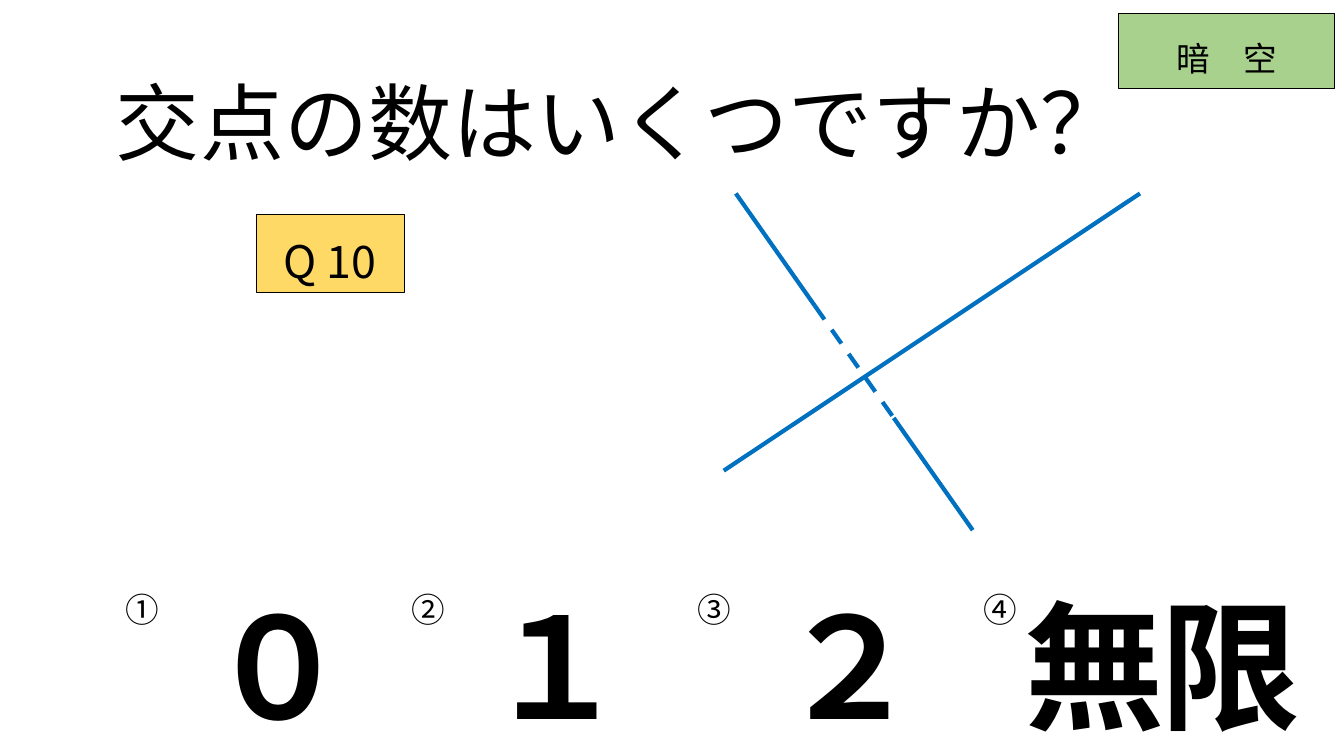
from dataclasses import dataclass

from lxml.etree import SubElement
from pptx import Presentation
from pptx.dml.color import RGBColor
from pptx.enum.dml import MSO_LINE_DASH_STYLE as Dash
from pptx.enum.shapes import MSO_CONNECTOR as Connector, MSO_SHAPE as Shape
from pptx.enum.text import MSO_ANCHOR as Anchor, MSO_AUTO_SIZE as AutoSize, PP_ALIGN as Align
from pptx.oxml.ns import qn
from pptx.util import Pt

COLORS = {"ink": "000000", "tag": "A9D18E", "number": "FFD966", "line": "0070C0"}
FONT = "Noto Sans CJK JP"


@dataclass(frozen=True)
class Box:
    left: float
    top: float
    width: float
    height: float

    def lengths(self) -> tuple:
        return Pt(self.left), Pt(self.top), Pt(self.width), Pt(self.height)


@dataclass(frozen=True)
class Label:
    text: str
    box: Box
    size: float
    fill: str
    anchor: Anchor
    space_before: float = 0


@dataclass(frozen=True)
class Choice:
    mark: str
    answer: str
    left: float
    width: float = 112.3
    spacing: float = 0


@dataclass(frozen=True)
class Segment:
    start: tuple[float, float]
    end: tuple[float, float]
    dash: Dash | None = None


TITLE_BOX = Box(59.8, 52.6, 766.1, 73.4)
MARKS_BOX = Box(82.8, 413.3, 816.5, 90)
ANSWER_TOP, ANSWER_HEIGHT = 419.8, 108

LABELS = [
    Label("暗　空", Box(799.2, 9.4, 154.1, 54), 24, "tag", Anchor.TOP, 10),
    Label("Q 10", Box(182.9, 153.4, 105.8, 55.4), 32, "number", Anchor.BOTTOM),
]
CHOICES = [
    Choice("①", "０", 141.8),
    Choice("②", "１", 340.6),
    Choice("③", "２", 549.4),
    Choice("④", "無限", 723.6, 213.8, -3),
]

STEEP_START, STEEP_END = (525.6, 138.2), (694.8, 378.7)


def steep_point(third: int) -> tuple[float, float]:
    """Point of the falling line after the given number of thirds."""
    x, y = (a + (b - a) * third / 3 for a, b in zip(STEEP_START, STEEP_END))
    return x, y


SEGMENTS = [
    Segment(steep_point(0), steep_point(1)),
    Segment((517, 336.2), (814.3, 138.2)),
    Segment(steep_point(1), steep_point(2), Dash.DASH),
    Segment(steep_point(2), steep_point(3)),
]


def color(name: str) -> RGBColor:
    return RGBColor.from_string(COLORS[name])


def write(frame, text: str, size: float, align=None, line_spacing=None,
          bold=None, spacing: float = 0, space_before: float = 0) -> None:
    paragraph = frame.paragraphs[0]
    if align is not None:
        paragraph.alignment = align
    if line_spacing is not None:
        paragraph.line_spacing = line_spacing
    if space_before:
        paragraph.space_before = Pt(space_before)
    run = paragraph.add_run()
    run.text = text
    font = run.font
    font.size, font.bold, font.name = Pt(size), bold, FONT
    font.color.rgb = color("ink")
    properties = run._r.get_or_add_rPr()
    SubElement(properties, qn("a:ea")).set("typeface", FONT)
    if spacing:
        properties.set("spc", str(round(spacing * 100)))


def add_title(slide, text: str) -> None:
    title = slide.shapes.title
    title.left, title.top, title.width, title.height = TITLE_BOX.lengths()
    frame = title.text_frame
    frame.auto_size = AutoSize.NONE
    frame.vertical_anchor = Anchor.BOTTOM
    write(frame, text, 60, Align.CENTER, 1.5)


def add_label(slide, label: Label) -> None:
    shape = slide.shapes.add_shape(Shape.RECTANGLE, *label.box.lengths())
    shape.shadow.inherit = False
    shape.fill.solid()
    shape.fill.fore_color.rgb = color(label.fill)
    shape.line.color.rgb = color("ink")
    shape.line.width = Pt(0.5)
    frame = shape.text_frame
    frame.word_wrap = True
    frame.vertical_anchor = label.anchor
    write(frame, label.text, label.size, Align.CENTER, 1.5, space_before=label.space_before)


def add_marks(slide, choices: list[Choice]) -> None:
    table = slide.shapes.add_table(1, len(choices), *MARKS_BOX.lengths()).table
    table.horz_banding = False
    for column, choice in enumerate(choices):
        table.columns[column].width = Pt(MARKS_BOX.width / len(choices))
        cell = table.cell(0, column)
        cell.fill.background()
        write(cell.text_frame, choice.mark, 24)


def add_answer(slide, choice: Choice) -> None:
    box = Box(choice.left, ANSWER_TOP, choice.width, ANSWER_HEIGHT)
    frame = slide.shapes.add_textbox(*box.lengths()).text_frame
    frame.word_wrap = True
    frame.vertical_anchor = Anchor.MIDDLE
    write(frame, choice.answer, 100, Align.CENTER, bold=True, spacing=choice.spacing)


def add_segment(slide, segment: Segment) -> None:
    ends = [Pt(value) for value in (*segment.start, *segment.end)]
    connector = slide.shapes.add_connector(Connector.STRAIGHT, *ends)
    connector.line.color.rgb = color("line")
    connector.line.width = Pt(3)
    if segment.dash is not None:
        connector.line.dash_style = segment.dash
    SubElement(connector._element.spPr, qn("a:effectLst"))


def main() -> None:
    deck = Presentation()
    deck.slide_width, deck.slide_height = Pt(960), Pt(540)
    slide = deck.slides.add_slide(deck.slide_layouts.get_by_name("Title Only"))
    add_title(slide, "交点の数はいくつですか？")
    add_marks(slide, CHOICES)
    for label in LABELS:
        add_label(slide, label)
    for choice in CHOICES:
        add_answer(slide, choice)
    for segment in SEGMENTS:
        add_segment(slide, segment)
    deck.save("out.pptx")


if __name__ == "__main__":
    main()
